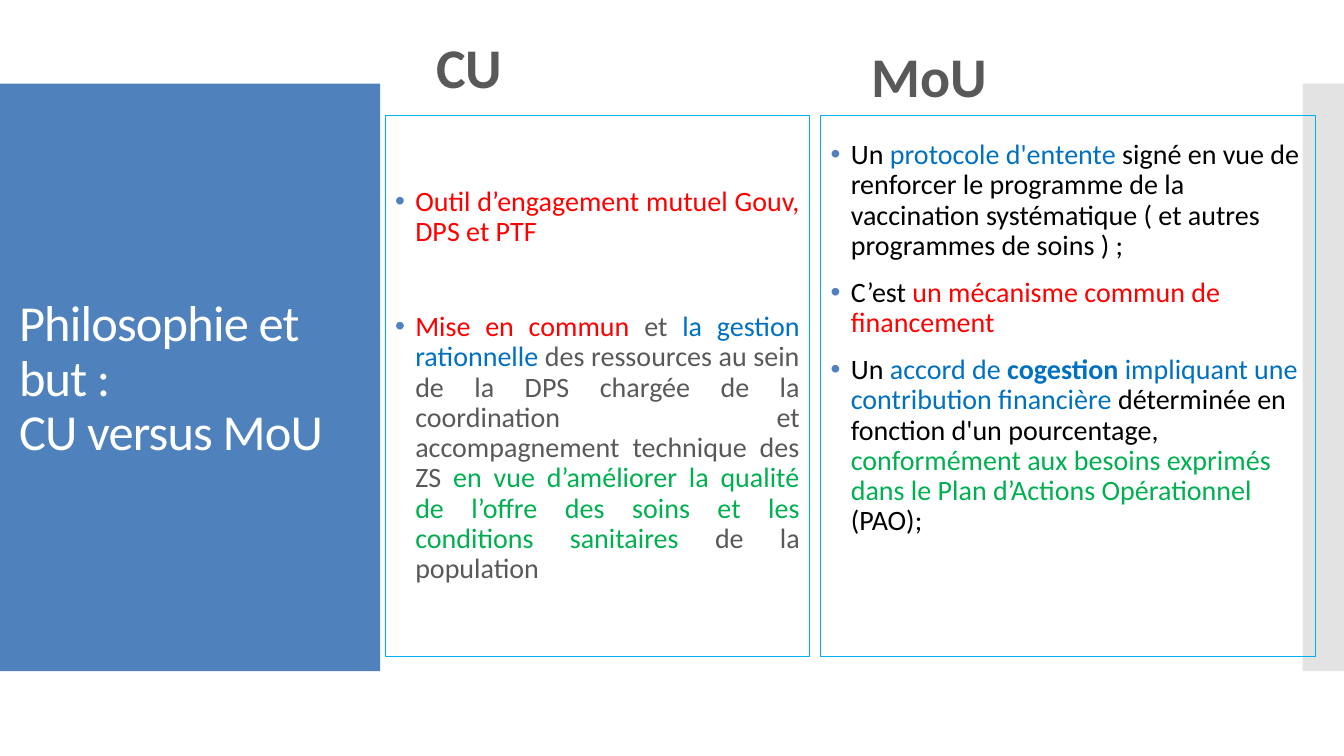
"""Build the slide comparing the philosophy and purpose of CU and MoU."""
from lxml import etree
from pptx import Presentation
from pptx import util as u
from pptx.dml.color import RGBColor
from pptx.enum import shapes, text
from pptx.oxml import ns

COLORS = {
    "panel": "4F81BD", "strip": "C8C8C8", "border": "00B0F0", "white": "FFFFFF",
    "gray": "595959", "black": "000000", "red": "FF0000", "blue": "0070C0",
    "green": "00B050",
}


def add_box(left, top, width, height, anchor=text.MSO_ANCHOR.MIDDLE):
    box = slide.shapes.add_textbox(*map(u.Inches, (left, top, width, height)))
    box.text_frame.word_wrap = True
    box.text_frame.vertical_anchor = anchor
    return box


def style_run(run, size, color, bold=False):
    run.font.name = "Calibri"
    run.font.size = u.Pt(size)
    run.font.bold = bold
    run.font.color.rgb = RGBColor.from_string(COLORS[color])


presentation = Presentation()
presentation.slide_width = u.Inches(13.33)
presentation.slide_height = u.Inches(7.5)
slide = presentation.slides.add_slide(presentation.slide_layouts[6])

for left, width, color in [(0, 3.77, "panel"), (12.92, 0.41, "strip")]:
    band = slide.shapes.add_shape(
        shapes.MSO_SHAPE.RECTANGLE, *map(u.Inches, (left, 0.83, width, 5.83)))
    band.shadow.inherit = False
    band.fill.solid()
    band.fill.fore_color.rgb = RGBColor.from_string(COLORS[color])
    band.line.fill.background()
    if color == "strip":
        strip_color = band.fill._xPr.find(".//" + ns.qn("a:srgbClr"))
        etree.SubElement(strip_color, ns.qn("a:alpha"), val="50000")

title = add_box(0.09, 1.03, 3.62, 5.48)
paragraph = title.text_frame.paragraphs[0]
paragraph.text = "Philosophie et but :\vCU versus MoU"
paragraph.line_spacing = 0.9
for run in paragraph.runs:
    style_run(run, 36, "white")
    run.font._element.set("spc", "-60")

for label, left, top in [("CU", 4.23, 0.17), ("MoU", 8.55, 0.26)]:
    heading = add_box(left, top, 3.8, 0.88, text.MSO_ANCHOR.BOTTOM)
    paragraph = heading.text_frame.paragraphs[0]
    paragraph.text = label
    paragraph.line_spacing = 0.9
    style_run(paragraph.runs[0], 40, "gray", True)

cu_points = [
    [("Outil d’engagement mutuel Gouv, DPS et PTF", "red")],
    [("Mise en commun", "red"), (" et ", "gray"),
     ("la gestion rationnelle ", "blue"),
     ("des ressources au sein de la DPS chargée de la coordination et "
      "accompagnement technique des ZS ", "gray"),
     ("en vue d’améliorer la qualité de l’offre des soins et les conditions "
      "sanitaires ", "green"),
     ("de la population", "gray")],
]
mou_points = [
    [("Un ", "black"), ("protocole d'entente", "blue"),
     (" signé en vue de renforcer le programme de la vaccination systématique "
      "( et autres programmes de soins ) ;", "black")],
    [("C’est ", "black"), ("un mécanisme commun de financement", "red")],
    [("Un ", "black"), ("accord de ", "blue"), ("cogestion", "blue"),
     (" impliquant une contribution financière ", "blue"),
     ("déterminée en fonction d'un pourcentage, ", "black"),
     ("conformément aux besoins exprimés dans le Plan d’Actions Opérationnel ",
      "green"),
     ("(PAO);", "black")],
]
columns = [
    (3.82, 4.21, cu_points, text.PP_ALIGN.JUSTIFY, 46, 0.05),
    (8.14, 4.91, mou_points, text.PP_ALIGN.LEFT, 12, 0.99),
]
for left, width, points, alignment, gap, bottom_margin in columns:
    column = add_box(left, 1.15, width, 5.36)
    column.line.color.rgb = RGBColor.from_string(COLORS["border"])
    column.line.width = u.Pt(0.75)
    frame = column.text_frame
    frame.margin_bottom = u.Inches(bottom_margin)
    for index, point in enumerate(points):
        paragraph = frame.add_paragraph() if index else frame.paragraphs[0]
        paragraph.alignment = alignment
        paragraph.line_spacing = 0.9
        paragraph.space_before = u.Pt(gap if index else 12)
        properties = paragraph._p.get_or_add_pPr()
        properties.set("marL", str(u.Inches(0.2)))
        properties.set("indent", str(u.Inches(-0.2)))
        bullet_color = etree.SubElement(properties, ns.qn("a:buClr"))
        etree.SubElement(bullet_color, ns.qn("a:srgbClr"), val=COLORS["panel"])
        etree.SubElement(properties, ns.qn("a:buFont"), typeface="Arial")
        etree.SubElement(properties, ns.qn("a:buChar"), char="•")
        for words, color in point:
            run = paragraph.add_run()
            run.text = words
            style_run(run, 20, color, words == "cogestion")

presentation.save("out.pptx")
